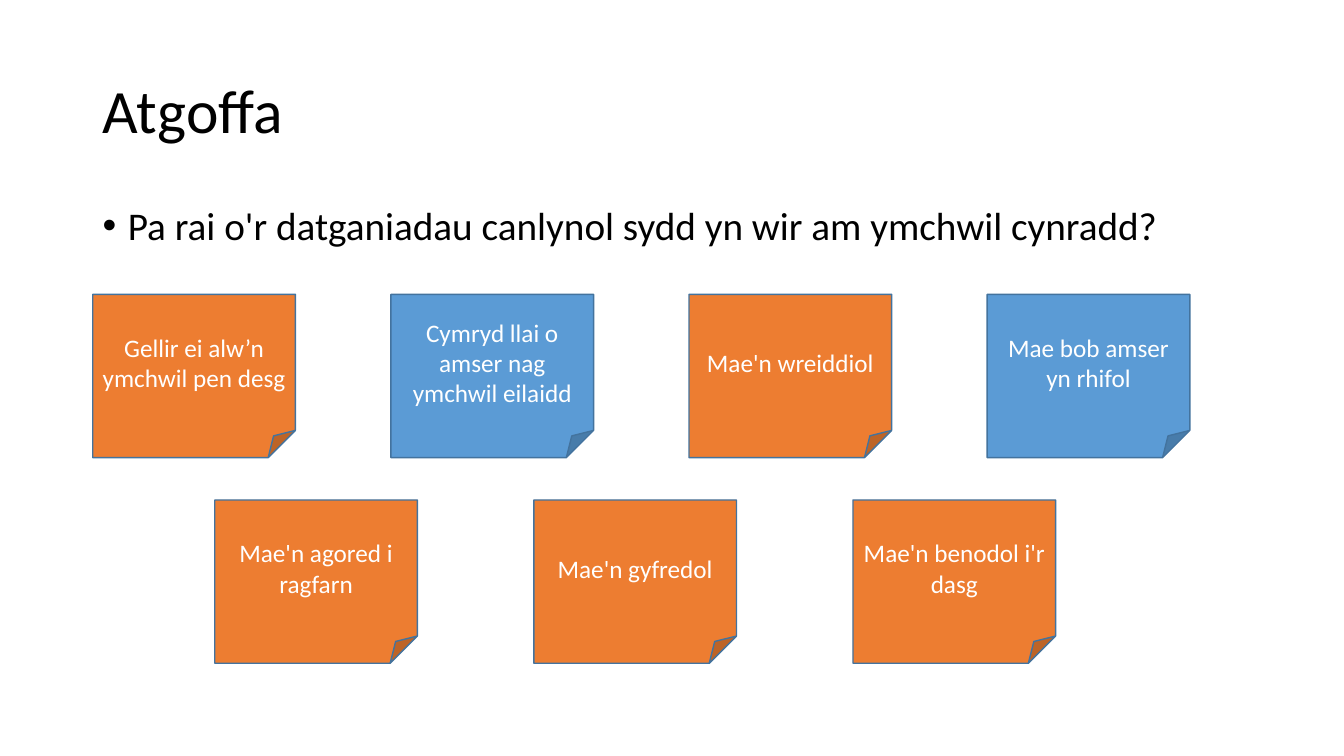
import dataclasses
import typing

import lxml.etree
import pptx
import pptx.dml.color
import pptx.enum.shapes
import pptx.enum.text
import pptx.oxml.ns
import pptx.util

Inches = pptx.util.Inches
Pt = pptx.util.Pt
Align = pptx.enum.text.PP_ALIGN
Anchor = pptx.enum.text.MSO_ANCHOR

ORANGE = "ED7D31"
BLUE = "5B9BD5"
EDGE = "43739E"
BLACK = "000000"
WHITE = "FFFFFF"


@dataclasses.dataclass
class Note:
    text: str
    fill: str = ORANGE


@dataclasses.dataclass
class Row:
    left: float
    top: float
    step: float
    notes: list[Note]


ROWS = [
    Row(0.92, 2.92, 2.957, [
        Note("Gellir ei alw’n ymchwil pen desg"),
        Note("Cymryd llai o amser nag ymchwil eilaidd", BLUE),
        Note("Mae'n wreiddiol"),
        Note("Mae bob amser yn rhifol", BLUE),
    ]),
    Row(2.13, 4.96, 3.165, [
        Note("Mae'n agored i ragfarn"),
        Note("Mae'n gyfredol"),
        Note("Mae'n benodol i'r dasg"),
    ]),
]


def color(code: str) -> pptx.dml.color.RGBColor:
    return pptx.dml.color.RGBColor.from_string(code)


def apply(item: typing.Any, values: dict[str, typing.Any]) -> None:
    for name, value in values.items():
        setattr(item, name, value)


def write(shape: typing.Any, text: str, size: int, ink: str,
          anchor: Anchor, form: dict[str, typing.Any]) -> typing.Any:
    frame = shape.text_frame
    apply(frame, {"word_wrap": True, "vertical_anchor": anchor,
                  "auto_size": pptx.enum.text.MSO_AUTO_SIZE.NONE})
    para = frame.paragraphs[0]
    apply(para, form)
    run = para.add_run()
    run.text = text
    apply(run.font, {"name": "Calibri", "size": Pt(size)})
    run.font.color.rgb = color(ink)
    return para


def add_title(slide: typing.Any) -> None:
    title = slide.shapes.title
    apply(title, {"left": Inches(0.92), "top": Inches(0.4),
                  "width": Inches(11.5), "height": Inches(1.45)})
    write(title, "Atgoffa", 44, BLACK, Anchor.MIDDLE,
          {"alignment": Align.LEFT, "line_spacing": 0.9})


def add_body(slide: typing.Any) -> None:
    box = slide.shapes.add_textbox(
        Inches(0.92), Inches(2), Inches(11.5), Inches(0.68))
    para = write(
        box, "Pa rai o'r datganiadau canlynol sydd yn wir am ymchwil cynradd?",
        28, BLACK, Anchor.TOP,
        {"alignment": Align.LEFT, "line_spacing": 0.9, "space_before": Pt(10)})
    props = para.runs[0].font and para._p.get_or_add_pPr()
    for name, value in {"marL": 0.25, "indent": -0.25}.items():
        props.set(name, str(Inches(value)))
    for tag, key, value in [("a:buFont", "typeface", "Arial"),
                            ("a:buChar", "char", "•")]:
        lxml.etree.SubElement(props, pptx.oxml.ns.qn(tag)).set(key, value)


def add_note(slide: typing.Any, note: Note, left: float, top: float) -> None:
    shape = slide.shapes.add_shape(
        pptx.enum.shapes.MSO_SHAPE.FOLDED_CORNER,
        Inches(left), Inches(top), Inches(2.01), Inches(1.62))
    shape.shadow.inherit = False
    shape.fill.solid()
    shape.fill.fore_color.rgb = color(note.fill)
    shape.line.color.rgb = color(EDGE)
    shape.line.width = Pt(1)
    write(shape, note.text, 18, WHITE, Anchor.MIDDLE,
          {"alignment": Align.CENTER})


def main() -> None:
    deck = pptx.Presentation()
    apply(deck, {"slide_width": Inches(13.33), "slide_height": Inches(7.5)})
    slide = deck.slides.add_slide(deck.slide_layouts.get_by_name("Title Only"))
    add_title(slide)
    add_body(slide)
    for row in ROWS:
        for place, note in enumerate(row.notes):
            add_note(slide, note, row.left + place * row.step, row.top)
    deck.save("out.pptx")


if __name__ == "__main__":
    main()
